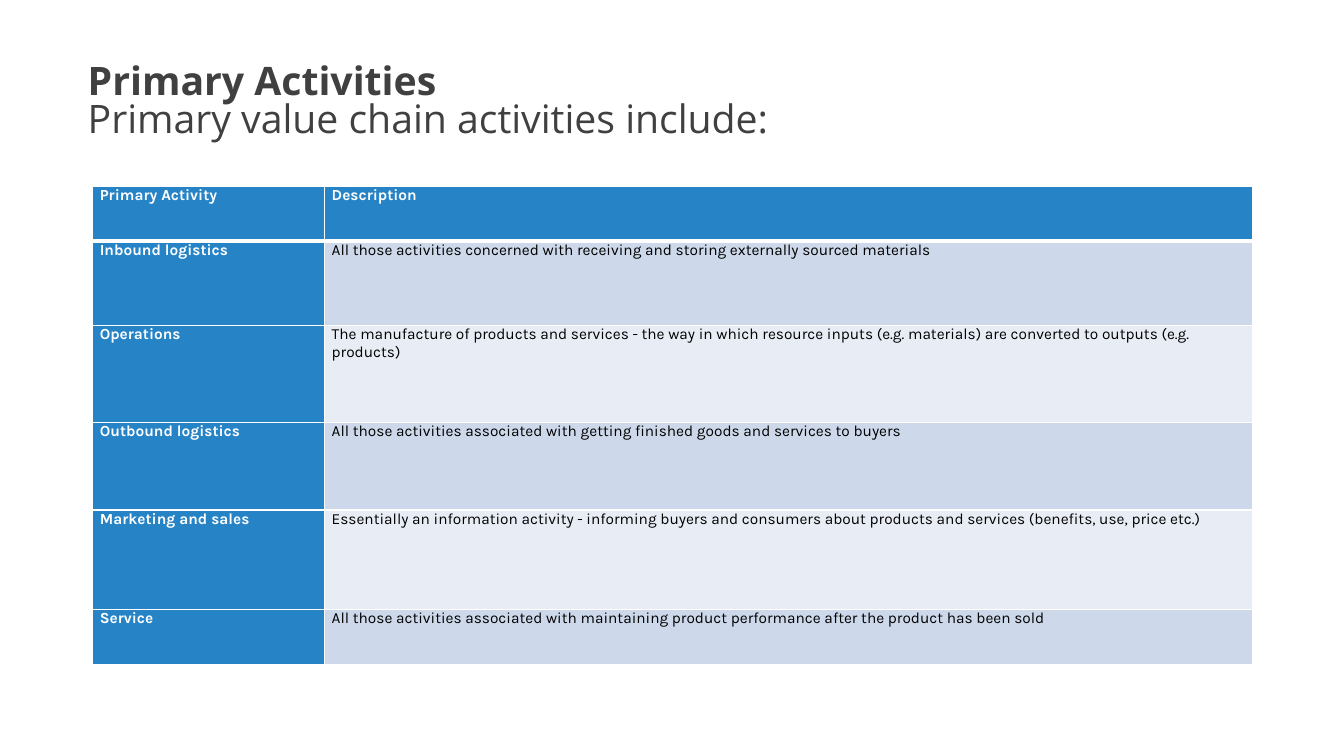
from lxml.etree import SubElement
from pptx import Presentation
from pptx.dml.color import RGBColor
from pptx.enum.text import MSO_ANCHOR, MSO_AUTO_SIZE, PP_ALIGN
from pptx.oxml.ns import qn
from pptx.util import Inches, Pt

BLUE = RGBColor(0x26, 0x83, 0xC6)
BAND_DARK = RGBColor(0xCD, 0xD9, 0xEA)
BAND_LIGHT = RGBColor(0xE8, 0xED, 0xF5)
WHITE = RGBColor(0xFF, 0xFF, 0xFF)
BLACK = RGBColor(0, 0, 0)
CHARCOAL = RGBColor(0x40, 0x40, 0x40)

SLIDE_WIDTH, SLIDE_HEIGHT = 13.33, 7.5
TITLE_BOX = (0.77, 0.6, 11.87, 1.39)
TABLE_BOX = (0.92, 1.85, 11.5, 4.74)
COLUMN_SHARES = (0.2, 0.8)
ROW_HEIGHTS = (0.54, 0.84, 0.96, 0.87, 0.99, 0.54)
TITLE_LINES = ("Primary Activities", "Primary value chain activities include:")
ACTIVITIES = (
    ("Primary Activity", "Description"),
    ("Inbound logistics",
     "All those activities concerned with receiving and storing externally sourced materials"),
    ("Operations",
     "The manufacture of products and services - the way in which resource inputs "
     "(e.g. materials) are converted to outputs (e.g. products)"),
    ("Outbound logistics",
     "All those activities associated with getting finished goods and services to buyers"),
    ("Marketing and sales",
     "Essentially an information activity - informing buyers and consumers about products "
     "and services (benefits, use, price etc.)"),
    ("Service",
     "All those activities associated with maintaining product performance after the "
     "product has been sold"),
)


def add_text(paragraph, text, font="Karla", size=11, color=BLACK, bold=False):
    run = paragraph.add_run()
    run.text = text
    run.font.name = font
    run.font.size = Pt(size)
    run.font.bold = bold
    run.font.color.rgb = color


def add_title(slide, box):
    title = slide.shapes.title
    title.left, title.top, title.width, title.height = map(Inches, box)
    frame = title.text_frame
    frame.word_wrap = True
    frame.auto_size = MSO_AUTO_SIZE.NONE
    frame.vertical_anchor = MSO_ANCHOR.TOP
    paragraph = frame.paragraphs[0]
    paragraph.alignment = PP_ALIGN.LEFT
    paragraph.line_spacing = 0.8
    heading, subheading = TITLE_LINES
    style = dict(font="Open Sans", size=28, color=CHARCOAL)
    add_text(paragraph, heading, bold=True, **style)
    paragraph.add_line_break()
    add_text(paragraph, subheading, **style)


def set_borders(cell, top=1, bottom=1):
    """Draw white borders, with widths in points; call before filling the cell."""
    properties = cell._tc.get_or_add_tcPr()
    for side, width in (("L", 1), ("R", 1), ("T", top), ("B", bottom)):
        line = SubElement(properties, qn(f"a:ln{side}"), w=str(Pt(width)))
        fill = SubElement(line, qn("a:solidFill"))
        SubElement(fill, qn("a:srgbClr"), val=str(WHITE))


def format_cell(cell, text, row, column):
    is_heading = row == 0 or column == 0
    set_borders(cell, top=3 if row == 1 else 1, bottom=3 if row == 0 else 1)
    cell.fill.solid()
    band = BAND_DARK if row % 2 else BAND_LIGHT
    cell.fill.fore_color.rgb = BLUE if is_heading else band
    cell.margin_left = cell.margin_right = Inches(0.07)
    cell.margin_top = cell.margin_bottom = 0
    add_text(cell.text_frame.paragraphs[0], text,
             color=WHITE if is_heading else BLACK, bold=is_heading)


def add_activity_table(slide, box):
    frame = slide.shapes.add_table(len(ACTIVITIES), len(COLUMN_SHARES), *map(Inches, box))
    table = frame.table
    table.first_col = True
    for column, share in zip(table.columns, COLUMN_SHARES):
        column.width = Inches(box[2] * share)
    for row, height in zip(table.rows, ROW_HEIGHTS):
        row.height = Inches(height)
    for row, texts in enumerate(ACTIVITIES):
        for column, text in enumerate(texts):
            format_cell(table.cell(row, column), text, row, column)


def main():
    presentation = Presentation()
    presentation.slide_width = Inches(SLIDE_WIDTH)
    presentation.slide_height = Inches(SLIDE_HEIGHT)
    title_only = presentation.slide_layouts[5]
    slide = presentation.slides.add_slide(title_only)
    add_title(slide, TITLE_BOX)
    add_activity_table(slide, TABLE_BOX)
    presentation.save("out.pptx")


if __name__ == "__main__":
    main()
